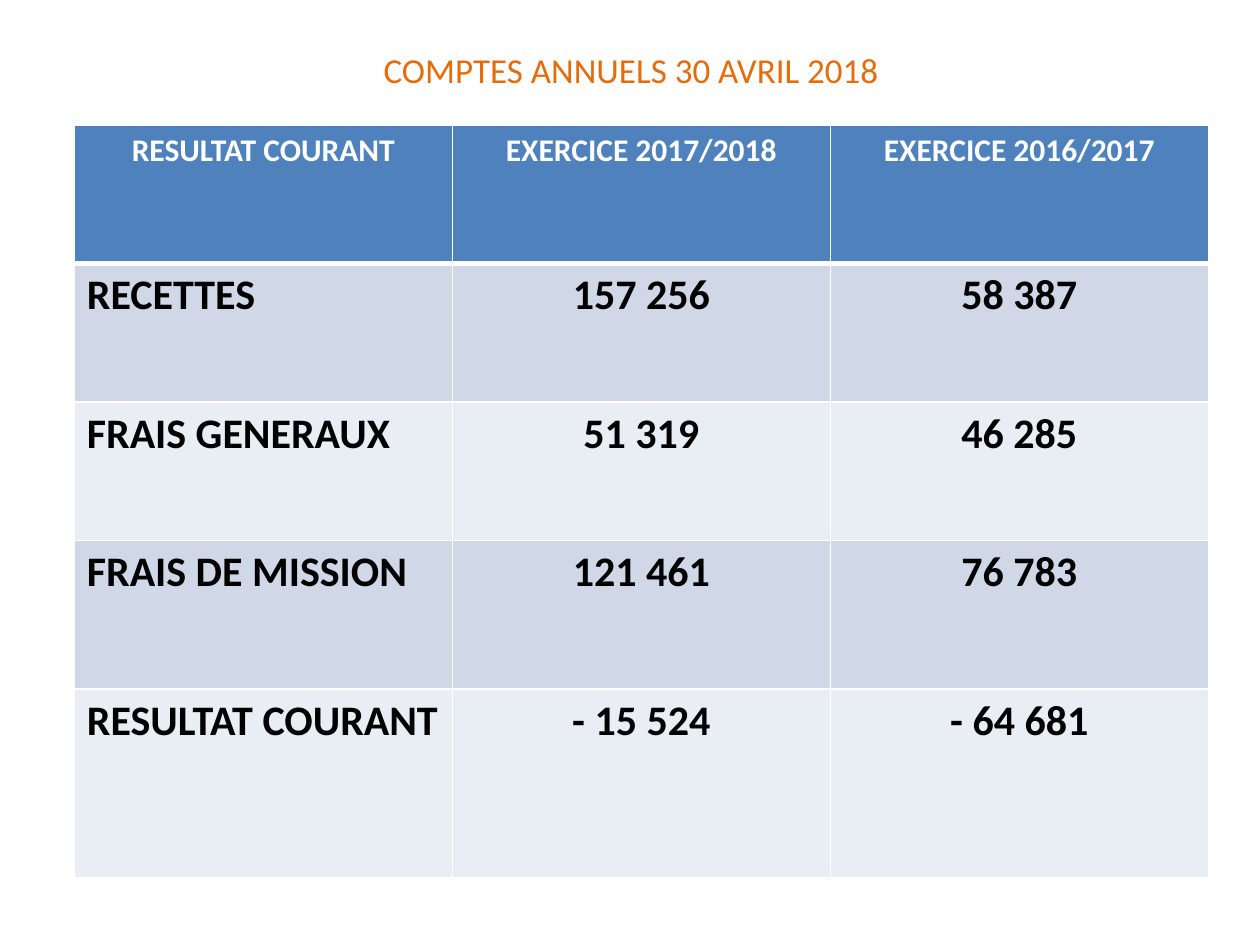
from dataclasses import dataclass
from lxml.etree import SubElement
from pptx import Presentation
from pptx.dml.color import RGBColor
from pptx.enum.text import MSO_ANCHOR, PP_ALIGN
from pptx.oxml.ns import qn
from pptx.slide import Slide
from pptx.util import Inches, Pt

ROWS = [
    ("RESULTAT COURANT", "EXERCICE 2017/2018", "EXERCICE 2016/2017"),
    ("RECETTES", "157 256", "58 387"),
    ("FRAIS GENERAUX", "51 319", "46 285"),
    ("FRAIS DE MISSION", "121 461", "76 783"),
    ("RESULTAT COURANT", "- 15 524", "- 64 681"),
]
HEIGHTS = (1.1, 1.1, 1.1, 1.18, 1.5)


def rgb(value):
    return RGBColor.from_string(value)


def write(tf, text, size=24, color="000000", bold=False, align=PP_ALIGN.CENTER, font="Calibri"):
    p = tf.paragraphs[0]
    p.alignment = align
    r = p.add_run()
    r.text = text
    r.font.name = font
    r.font.size = Pt(size)
    r.font.bold = bold
    r.font.color.rgb = rgb(color)


@dataclass
class Deck:
    """Holds the style and the current slide, and draws each kind of element."""

    s: Slide
    accent: str = "E46C0A"
    header: str = "4F81BD"
    bands: tuple = ("D0D8E8", "E9EDF4")
    line: str = "FFFFFF"

    def title(self, text, x, y, w, h):
        sp = self.s.shapes.title
        sp.left, sp.top, sp.width, sp.height = map(Inches, (x, y, w, h))
        sp.text_frame.vertical_anchor = MSO_ANCHOR.MIDDLE
        write(sp.text_frame, text, size=20, color=self.accent)

    def borders(self, cell, **widths):
        tcPr = cell._tc.get_or_add_tcPr()
        for side in "LRTB":
            ln = SubElement(tcPr, qn(f"a:ln{side}"), w=str(Pt(widths.get(side, 1))))
            fill = SubElement(ln, qn("a:solidFill"))
            SubElement(fill, qn("a:srgbClr"), val=self.line)

    def table(self, rows, heights, x, y, w):
        frame = self.s.shapes.add_table(
            len(rows), len(rows[0]), Inches(x), Inches(y), Inches(w), Inches(sum(heights)))
        tbl = frame.table
        for i, (row, height) in enumerate(zip(rows, heights)):
            tbl.rows[i].height = Inches(height)
            for j, text in enumerate(row):
                self.cell(tbl.cell(i, j), text, i, j)

    def cell(self, cell, text, i, j):
        edges = {0: {"B": 3}, 1: {"T": 3}}.get(i, {})
        self.borders(cell, **edges)
        cell.fill.solid()
        if i == 0:
            cell.fill.fore_color.rgb = rgb(self.header)
            write(cell.text_frame, text, size=18, color="FFFFFF", bold=True)
        else:
            cell.fill.fore_color.rgb = rgb(self.bands[(i - 1) % 2])
            align = PP_ALIGN.CENTER if j else PP_ALIGN.LEFT
            write(cell.text_frame, text, bold=True, align=align)


def main():
    prs = Presentation()
    prs.slide_width, prs.slide_height = Inches(10), Inches(7.5)
    deck = Deck(prs.slides.add_slide(prs.slide_layouts[5]))
    deck.title("COMPTES ANNUELS 30 AVRIL 2018", 0.51, 0.13, 9, 0.85)
    deck.table(ROWS, HEIGHTS, 0.59, 0.99, 9)
    prs.save("out.pptx")


if __name__ == "__main__":
    main()
